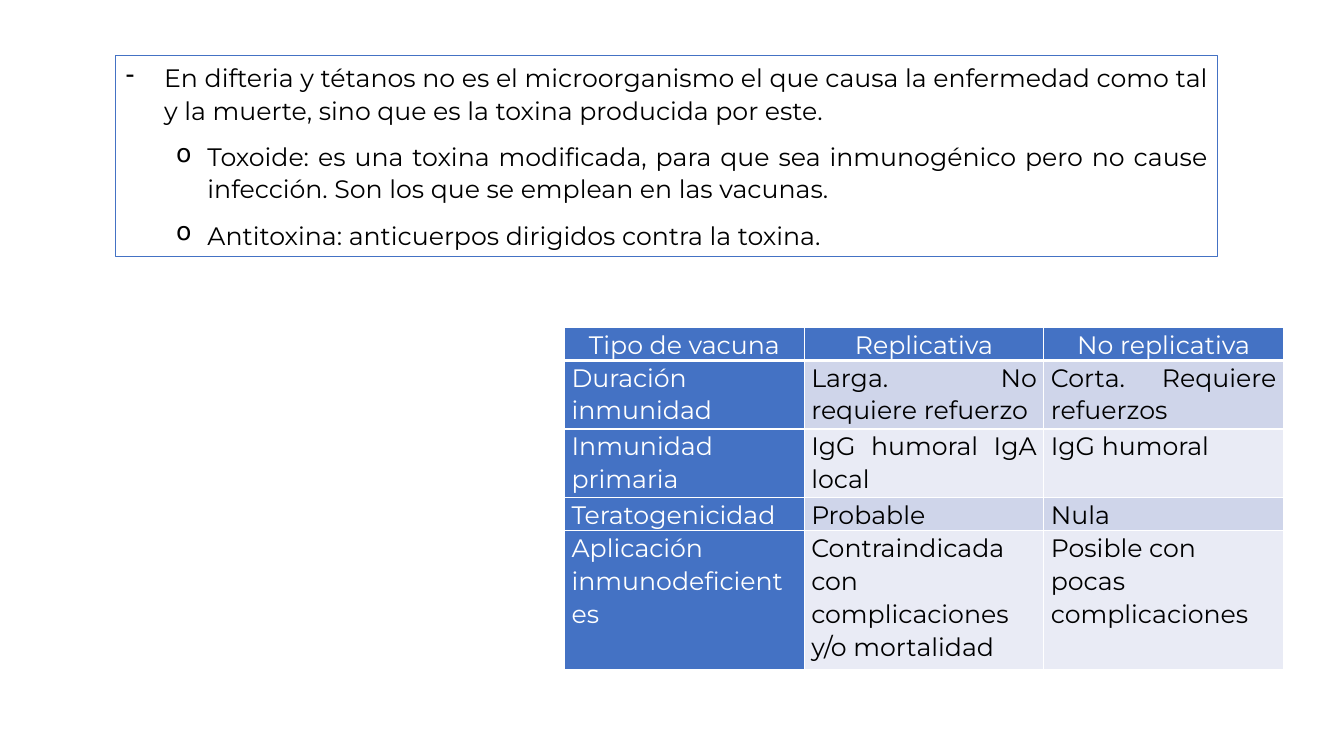
from lxml.etree import SubElement as Sub
from pptx import Presentation
from pptx.dml.color import RGBColor
from pptx.enum.shapes import MSO_SHAPE as Kind
from pptx.enum.text import MSO_ANCHOR as Anchor, PP_ALIGN as Align
from pptx.oxml.ns import qn
from pptx.util import Inches, Pt

BLUE = RGBColor(0x44, 0x72, 0xC4)
DARK = RGBColor(0xCF, 0xD5, 0xEA)
LIGHT = RGBColor(0xE9, 0xEB, 0xF5)
WHITE = RGBColor(0xFF, 0xFF, 0xFF)
BLACK = RGBColor(0x00, 0x00, 0x00)
FONT = "Montserrat"

NOTES = [
    (0, "En difteria y tétanos no es el microorganismo el que causa la enfermedad "
        "como tal y la muerte, sino que es la toxina producida por este."),
    (1, "Toxoide: es una toxina modificada, para que sea inmunogénico pero no cause "
        "infección. Son los que se emplean en las vacunas."),
    (1, "Antitoxina: anticuerpos dirigidos contra la toxina."),
]
LEVELS = [("-", 0.38, -0.38), ("o", 0.81, -0.31)]
ROWS = [
    (0.32, "Tipo de vacuna", "Replicativa", "No replicativa"),
    (0.68, "Duración inmunidad", "Larga. No requiere refuerzo",
     "Corta. Requiere refuerzos"),
    (0.68, "Inmunidad primaria", "IgG humoral IgA local", "IgG humoral"),
    (0.33, "Teratogenicidad", "Probable", "Nula"),
    (1.38, "Aplicación inmunodeficientes",
     "Contraindicada con complicaciones y/o mortalidad",
     "Posible con pocas complicaciones"),
]


def write(para, text, color, align):
    """Add one styled run to a paragraph."""
    para.alignment = align
    para.line_spacing = 1.07
    run = para.add_run()
    run.text = text
    run.font.name = FONT
    run.font.size = Pt(18)
    run.font.color.rgb = color


def bullet(para, level):
    """Give a paragraph the bullet and indents of its level."""
    mark, left, hang = LEVELS[level]
    para.level = level
    props = para._p.get_or_add_pPr()
    props.set("marL", str(Inches(left)))
    props.set("indent", str(Inches(hang)))
    Sub(props, qn("a:buChar"), char=mark)


def add_notes(slide):
    """Draw the outlined box with the bulleted notes."""
    box = slide.shapes.add_shape(Kind.RECTANGLE, Inches(1.15), Inches(0.55),
                                 Inches(10.93), Inches(2))
    box.shadow.inherit = False
    box.fill.background()
    box.line.color.rgb = BLUE
    box.line.width = Pt(0.75)
    frame = box.text_frame
    frame.word_wrap = True
    frame.vertical_anchor = Anchor.TOP
    for i, (level, text) in enumerate(NOTES):
        para = frame.add_paragraph() if i else frame.paragraphs[0]
        bullet(para, level)
        para.space_after = Pt(10)
        write(para, text, BLACK, Align.JUSTIFY)


def border(cell, row):
    """Draw white cell edges, thick below the header row."""
    props = cell._tc.get_or_add_tcPr()
    for side in "LRTB":
        thick = (row, side) in ((0, "B"), (1, "T"))
        line = Sub(props, qn(f"a:ln{side}"), w=str(Pt(3 if thick else 1)))
        fill = Sub(line, qn("a:solidFill"))
        Sub(fill, qn("a:srgbClr"), val=str(WHITE))


def fill_cell(cell, row, col, text):
    """Style one cell by its place and write its text."""
    head = row == 0 or col == 0
    border(cell, row)
    cell.fill.solid()
    cell.fill.fore_color.rgb = BLUE if head else DARK if row % 2 else LIGHT
    cell.margin_left = cell.margin_right = Inches(0.07)
    cell.margin_top = cell.margin_bottom = 0
    last = row == len(ROWS) - 1 and col > 0
    align = Align.CENTER if row == 0 else Align.LEFT if last else Align.JUSTIFY
    write(cell.text_frame.paragraphs[0], text, WHITE if head else BLACK, align)


def add_grid(slide):
    """Draw the table that compares the vaccine types."""
    high = sum(row[0] for row in ROWS)
    grid = slide.shapes.add_table(len(ROWS), 3, Inches(5.6), Inches(3.25),
                                  Inches(7.13), Inches(high)).table
    for r, (tall, *texts) in enumerate(ROWS):
        grid.rows[r].height = Inches(tall)
        for c, text in enumerate(texts):
            fill_cell(grid.cell(r, c), r, c, text)


def main():
    """Build and save the slide."""
    deck = Presentation()
    deck.slide_width, deck.slide_height = Inches(13.33), Inches(7.5)
    slide = deck.slides.add_slide(deck.slide_layouts[6])
    add_notes(slide)
    add_grid(slide)
    deck.save("out.pptx")


if __name__ == "__main__":
    main()
